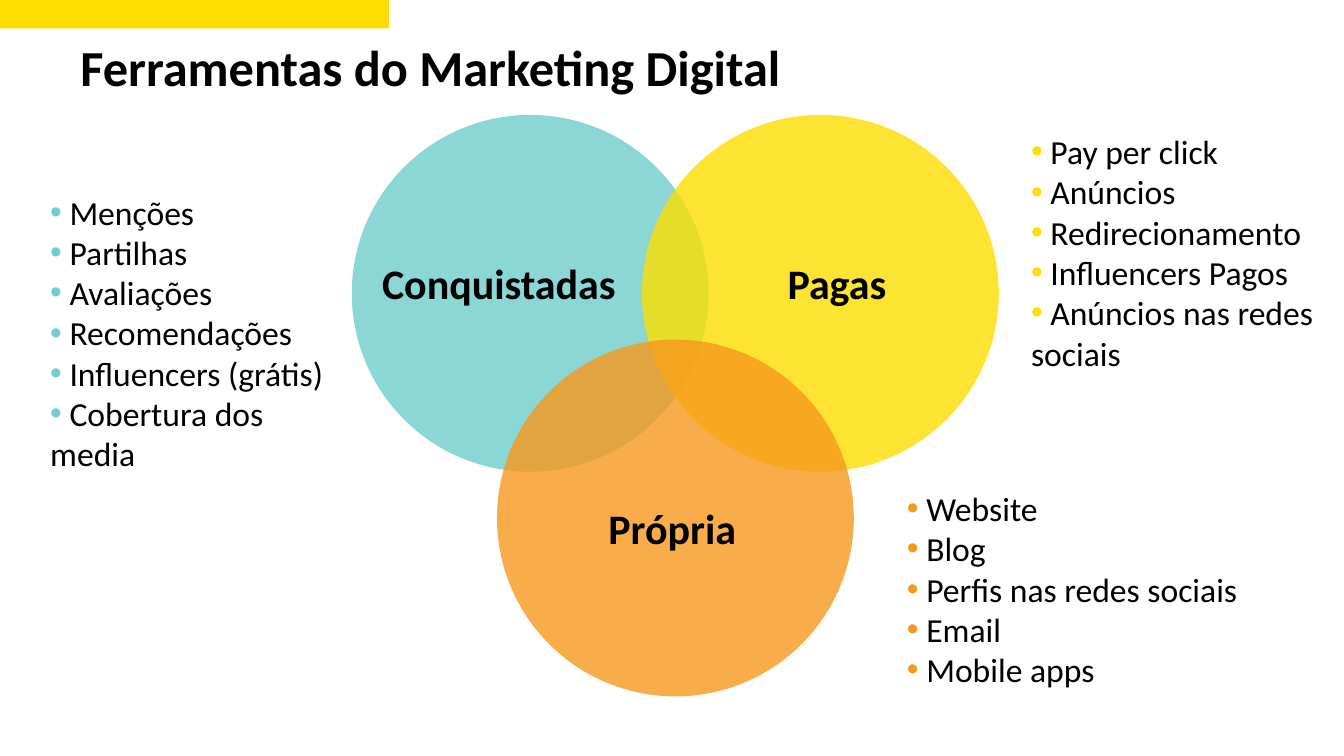
"""Build the slide on digital marketing tools: three overlapping circles with lists."""
from lxml import etree
from pptx import Presentation
from pptx import util as u
from pptx.dml.color import RGBColor
from pptx.enum import shapes, text
from pptx.oxml.ns import qn

TITLE = "Ferramentas do Marketing Digital"
MEDIA = [
    dict(name="Conquistadas", color="earned", circle=(251.3, 82.1), label=(261.4, 180.7, 190),
         tools=["Menções", "Partilhas", "Avaliações", "Recomendações",
                "Influencers (grátis)", "Cobertura dos media"],
         list_box=(28.8, 133.2, 217.4, 211)),
    dict(name="Pagas", color="paid", circle=(458.6, 82.1), label=(519.8, 180.7, 156.2),
         tools=["Pay per click", "Anúncios", "Redirecionamento",
                "Influencers Pagos", "Anúncios nas redes sociais"],
         list_box=(729.4, 90, 224.6, 181.4)),
    dict(name="Própria", color="owned", circle=(355, 242.6), label=(375.1, 355.7, 210.2),
         tools=["Website", "Blog", "Perfis nas redes sociais", "Email", "Mobile apps"],
         list_box=(640.8, 344.9, 254.9, 152.6)),
]
THEME = dict(font="Calibri", bullet_font="Arial", ink="000000", earned="6ECECB",
             paid="FDDE00", owned="F7981D", title=36, label=30, tool=24, alpha=80000)
DIAMETER = 254.9
LABEL_HEIGHT = 43.9

deck = Presentation()
deck.slide_width, deck.slide_height = u.Pt(960), u.Pt(540)
slide = deck.slides.add_slide(deck.slide_layouts[6])


def add_filled(kind, box, color):
    part = slide.shapes.add_shape(kind, *map(u.Pt, box))
    part.shadow.inherit = False
    part.fill.solid()
    part.fill.fore_color.rgb = RGBColor.from_string(THEME[color])
    part.line.fill.background()
    return part


def add_text(lines, box, size, bold=False, align=text.PP_ALIGN.LEFT):
    frame = slide.shapes.add_textbox(*map(u.Pt, box)).text_frame
    frame.word_wrap = True
    frame.text = "\n".join(lines)
    for line in frame.paragraphs:
        line.alignment = align
        for run in line.runs:
            run.font.name, run.font.size, run.font.bold = THEME["font"], u.Pt(THEME[size]), bold
            run.font.color.rgb = RGBColor.from_string(THEME["ink"])
    return frame


def add_bullet(line, color):
    props = line._p.get_or_add_pPr()
    props.set("marL", "0")
    props.set("indent", "0")
    tint = etree.SubElement(props, qn("a:buClr"))
    etree.SubElement(tint, qn("a:srgbClr"), val=THEME[color])
    etree.SubElement(props, qn("a:buFont"), typeface=THEME["bullet_font"])
    etree.SubElement(props, qn("a:buChar"), char="•")


add_filled(shapes.MSO_SHAPE.RECTANGLE, (0, 0, 277.9, 20.2), "paid")
heading = add_text([TITLE], (50.4, 27.4, 590.4, 54.7), "title", bold=True)
heading.paragraphs[0].line_spacing = 0.9

for medium in MEDIA:
    circle = add_filled(shapes.MSO_SHAPE.OVAL, (*medium["circle"], DIAMETER, DIAMETER),
                        medium["color"])
    tint = circle.fill._xPr.find(qn("a:solidFill"))[0]
    etree.SubElement(tint, qn("a:alpha"), val=str(THEME["alpha"]))

for medium in MEDIA:
    add_text([medium["name"]], (*medium["label"], LABEL_HEIGHT), "label", bold=True,
             align=text.PP_ALIGN.CENTER)

for medium in MEDIA:
    tools = add_text([f" {tool}" for tool in medium["tools"]], medium["list_box"], "tool")
    for line in tools.paragraphs:
        add_bullet(line, medium["color"])

deck.save("out.pptx")
